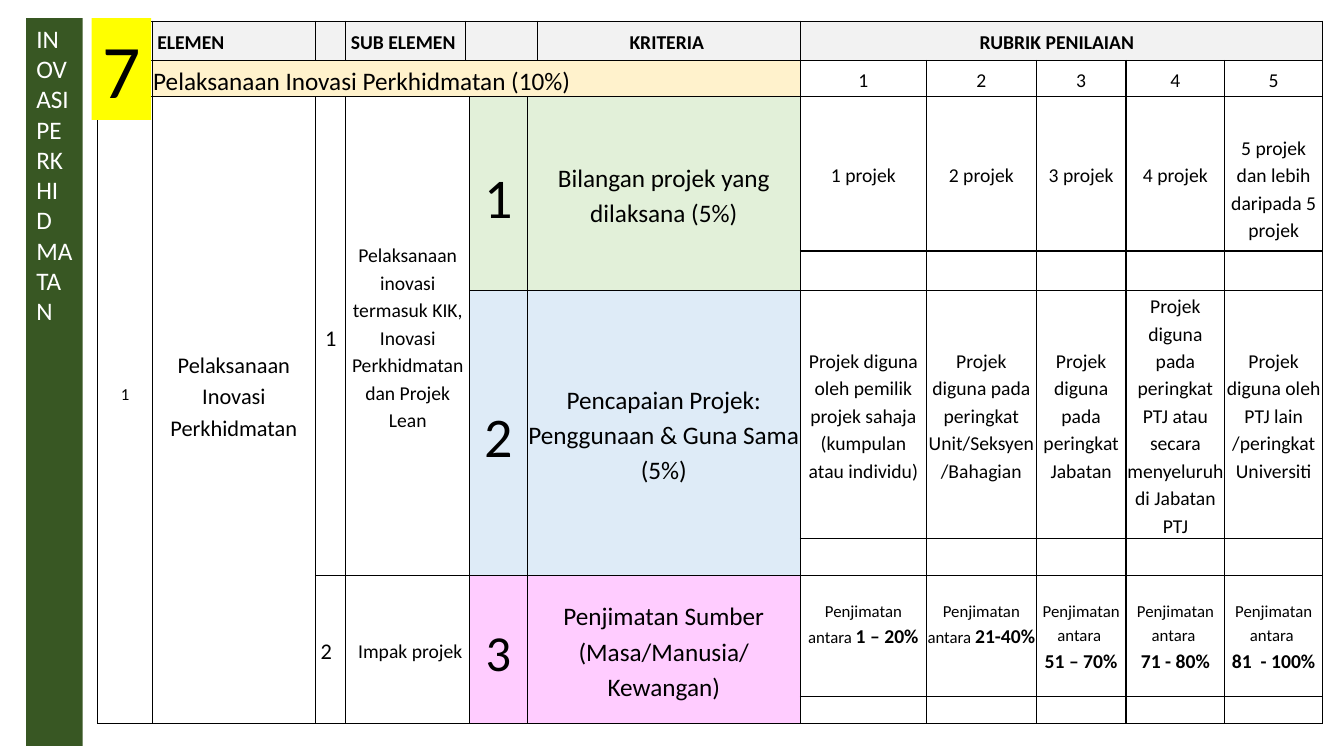
from dataclasses import dataclass
from typing import Optional

from lxml.etree import SubElement
from pptx import Presentation
from pptx.dml.color import RGBColor
from pptx.enum.shapes import MSO_SHAPE
from pptx.enum.text import MSO_ANCHOR, MSO_AUTO_SIZE, PP_ALIGN
from pptx.oxml.ns import qn
from pptx.util import Inches, Pt

COLORS = {
    "black": "000000", "white": "FFFFFF", "bar": "385723", "badge": "FFFF00",
    "header": "F2F2F2", "element": "FFF2CC", "green": "E2F0D9",
    "blue": "DEEBF7", "pink": "FFCCFF",
}
FONT = "Calibri"
COLUMN_WIDTHS = [0.54, 1.62, 0.3, 1.19, 0.04, 0.57, 0.1, 2.61, 1.25, 1.09, 0.89, 0.98, 0.97]
ROW_HEIGHTS = [0.39, 0.35, 1.53, 0.39, 2.46, 0.37, 1.2, 0.27]
FIRST_SCORE_COLUMN = 8


@dataclass
class Run:
    text: str
    size: float
    bold: bool = False


@dataclass
class Cell:
    row: int
    column: int
    paragraphs: list[list[Run]]
    rows: int = 1
    columns: int = 1
    fill: Optional[str] = None
    align: PP_ALIGN = PP_ALIGN.CENTER
    anchor: MSO_ANCHOR = MSO_ANCHOR.MIDDLE
    left: float = 0.01
    right: float = 0.01
    top: float = 0.01
    bottom: float = 0


def rgb(name: str) -> RGBColor:
    return RGBColor.from_string(COLORS[name])


def plain(text: str, size: float, bold: bool = False) -> list[list[Run]]:
    return [[Run(text, size, bold)]]


def write_text(text_frame, paragraphs: list[list[Run]], *, color: str = "black",
               align: PP_ALIGN = PP_ALIGN.LEFT, line_spacing: float = 1.0) -> None:
    for index, runs in enumerate(paragraphs):
        paragraph = text_frame.add_paragraph() if index else text_frame.paragraphs[0]
        paragraph.alignment = align
        paragraph.line_spacing = line_spacing
        for item in runs:
            for number, line in enumerate(item.text.split("\n")):
                if number:
                    paragraph.add_line_break()
                run = paragraph.add_run()
                run.text = line
                run.font.name = FONT
                run.font.size = Pt(item.size)
                run.font.bold = item.bold
                run.font.color.rgb = rgb(color)


def prepare_cell(cell) -> None:
    """Give a cell black borders, no fill, thin margins and a small empty line."""
    cell.margin_left = cell.margin_right = cell.margin_top = Inches(0.01)
    cell.margin_bottom = 0
    properties = cell._tc.get_or_add_tcPr()
    for side in ("a:lnL", "a:lnR", "a:lnT", "a:lnB"):
        line = SubElement(properties, qn(side), w=str(Pt(1)))
        solid = SubElement(line, qn("a:solidFill"))
        SubElement(solid, qn("a:srgbClr"), val=COLORS["black"])
    cell.fill.background()
    SubElement(cell.text_frame.paragraphs[0]._p, qn("a:endParaRPr"), sz="1000")


def draw_cell(table, item: Cell) -> None:
    cell = table.cell(item.row, item.column)
    if item.rows > 1 or item.columns > 1:
        cell.merge(table.cell(item.row + item.rows - 1, item.column + item.columns - 1))
    if item.fill:
        cell.fill.solid()
        cell.fill.fore_color.rgb = rgb(item.fill)
    cell.vertical_anchor = item.anchor
    cell.margin_left, cell.margin_right = Inches(item.left), Inches(item.right)
    cell.margin_top, cell.margin_bottom = Inches(item.top), Inches(item.bottom)
    write_text(cell.text_frame, item.paragraphs, align=item.align, line_spacing=1.15)


def table_cells() -> list[Cell]:
    left = PP_ALIGN.LEFT
    cells = [
        # Header and element rows
        Cell(0, 1, plain("ELEMEN", 14, True), fill="header", align=left, left=0.05),
        Cell(0, 2, [], fill="header"),
        Cell(0, 3, plain("SUB ELEMEN", 14, True), fill="header", align=left, left=0.05),
        Cell(0, 4, [], columns=3, fill="header"),
        Cell(0, 7, plain("KRITERIA", 14, True), fill="header", right=0.05),
        Cell(0, 8, plain("RUBRIK PENILAIAN", 14, True), columns=5, fill="header", right=0.1),
        Cell(1, 1, plain("Pelaksanaan Inovasi Perkhidmatan (10%)", 18), columns=7,
             fill="element", align=left),
        # Elements and sub-elements
        Cell(2, 0, plain("1", 12), rows=6, bottom=0.35),
        Cell(2, 1, plain("Pelaksanaan Inovasi Perkhidmatan", 16), rows=6, bottom=0.31),
        Cell(2, 2, plain("1", 16), rows=4),
        Cell(2, 3, plain("Pelaksanaan inovasi termasuk KIK, Inovasi Perkhidmatan dan "
                         "Projek Lean", 14), rows=4, columns=2),
        Cell(6, 2, plain("2", 16), rows=2, align=left, left=0.05),
        Cell(6, 3, plain("Impak projek", 14), rows=2, columns=2, left=0.05, right=0),
    ]

    # Criteria
    criteria = [
        (2, "1", 40, "green", plain("Bilangan projek yang dilaksana (5%)", 18)),
        (4, "2", 40, "blue", plain("Pencapaian Projek: Penggunaan & Guna Sama\n(5%)", 18)),
        (6, "3", 36, "pink", [[Run("Penjimatan Sumber (Masa/Manusia/", 18)],
                              [Run("Kewangan)", 18)]]),
    ]
    for row, number, size, fill, paragraphs in criteria:
        cells.append(Cell(row, 5, plain(number, size), rows=2, fill=fill))
        cells.append(Cell(row, 6, paragraphs, rows=2, columns=2, fill=fill))

    # Scores for the number and the use of projects
    score_rows = {
        1: ["1", "2", "3", "4", "5"],
        2: ["1 projek", "2 projek", "3 projek", "4 projek",
            "5 projek dan lebih daripada 5 projek"],
        4: ["Projek diguna oleh pemilik projek sahaja (kumpulan atau individu)",
            "Projek diguna pada peringkat Unit/Seksyen/Bahagian",
            "Projek diguna pada peringkat Jabatan",
            "Projek diguna pada peringkat PTJ atau secara menyeluruh di Jabatan PTJ",
            "Projek diguna oleh PTJ lain /peringkat Universiti"],
    }
    for row, texts in score_rows.items():
        for column, text in enumerate(texts, FIRST_SCORE_COLUMN):
            top = 0.28 if text.startswith("5 projek") else 0.01
            cells.append(Cell(row, column, plain(text, 14), top=top))

    # Scores for savings
    savings = ["1 – 20%", "21-40%", "51 – 70%", "71 - 80%", "81  - 100%"]
    for index, saving in enumerate(savings):
        label, value = Run("Penjimatan antara ", 12), Run(saving, 14, True)
        same_line = index < 2
        cells.append(Cell(6, FIRST_SCORE_COLUMN + index,
                          [[label, value]] if same_line else [[label], [value]],
                          anchor=MSO_ANCHOR.BOTTOM, bottom=0.47 if same_line else 0.23))
    return cells


def add_rubric_table(slide) -> None:
    table = slide.shapes.add_table(
        len(ROW_HEIGHTS), len(COLUMN_WIDTHS), Inches(0.97), Inches(0.21),
        Inches(sum(COLUMN_WIDTHS)), Inches(sum(ROW_HEIGHTS))).table
    table.first_row = table.horz_banding = False
    for column, width in zip(table.columns, COLUMN_WIDTHS):
        column.width = Inches(width)
    for row, height in zip(table.rows, ROW_HEIGHTS):
        row.height = Inches(height)
    for cell in table.iter_cells():
        prepare_cell(cell)
    for item in table_cells():
        draw_cell(table, item)


def format_block(shape, bounds: tuple[float, float, float, float], fill: str) -> None:
    shape.left, shape.top, shape.width, shape.height = (Inches(value) for value in bounds)
    shape.fill.solid()
    shape.fill.fore_color.rgb = rgb(fill)
    shape.line.fill.background()
    shape.text_frame.auto_size = MSO_AUTO_SIZE.NONE
    shape.text_frame.vertical_anchor = MSO_ANCHOR.TOP


def main() -> None:
    presentation = Presentation()
    presentation.slide_width, presentation.slide_height = Inches(13.33), Inches(7.5)
    slide = presentation.slides.add_slide(presentation.slide_layouts[5])
    add_rubric_table(slide)

    # Vertical title bar
    title = slide.shapes.title
    format_block(title, (0.26, 0.18, 0.56, 7.22), "bar")
    title.text_frame.word_wrap = True
    title.text_frame._txBody.bodyPr.set("vert", "wordArtVert")
    write_text(title.text_frame, plain("INOVASI PERKHIDMATAN", 18), color="white")

    # Element number
    badge = slide.shapes.add_shape(MSO_SHAPE.RECTANGLE, 0, 0, 0, 0)
    badge.shadow.inherit = False
    format_block(badge, (0.91, 0.18, 0.59, 1.01), "badge")
    badge.text_frame.word_wrap = False
    write_text(badge.text_frame, plain("7", 54), align=PP_ALIGN.CENTER)

    presentation.save("out.pptx")


if __name__ == "__main__":
    main()
